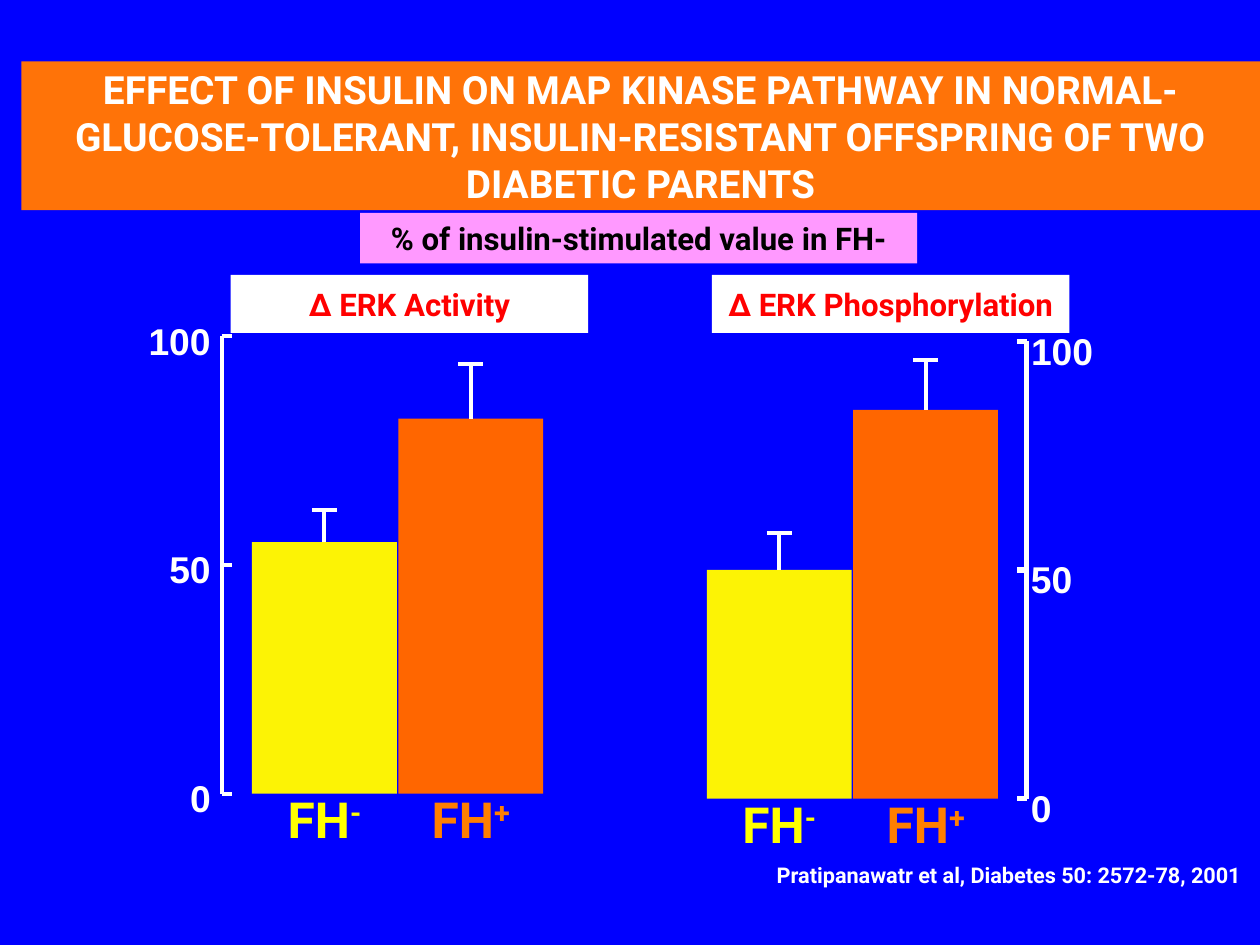
import pptx
import pptx.util
import pptx.dml.color
import pptx.enum.shapes
import pptx.enum.text
import pptx.oxml.ns
import lxml.etree

Cm = pptx.util.Cm
Pt = pptx.util.Pt
RGB = pptx.dml.color.RGBColor
ANCHOR = pptx.enum.text.MSO_ANCHOR

BLUE = RGB(0x00, 0x00, 0xFF)
WHITE = RGB(0xFF, 0xFF, 0xFF)
BLACK = RGB(0x00, 0x00, 0x00)
RED = RGB(0xFF, 0x00, 0x00)
PINK = RGB(0xFF, 0x99, 0xFF)
AMBER = RGB(0xFF, 0x73, 0x08)
LEMON = RGB(0xFC, 0xF3, 0x05)
RUST = RGB(0xFF, 0x66, 0x00)
YELLOW = RGB(0xFF, 0xFF, 0x00)
ORANGE = RGB(0xFF, 0x7F, 0x00)

AXIS = 9.22   # height of 0 to 100
BAR = 2.92    # bar width
STEP = 2.95   # from one bar to the next
GROUPS = [("-", LEMON, YELLOW), ("+", RUST, ORANGE)]


def rect(slide, x, y, w, h, fill):
    kind = pptx.enum.shapes.MSO_SHAPE.RECTANGLE
    shape = slide.shapes.add_shape(kind, Cm(x), Cm(y), Cm(w), Cm(h))
    shape.shadow.inherit = False
    shape.fill.solid()
    shape.fill.fore_color.rgb = fill
    shape.line.fill.background()
    return shape


def line(slide, x1, y1, x2, y2, width):
    kind = pptx.enum.shapes.MSO_CONNECTOR.STRAIGHT
    item = slide.shapes.add_connector(kind, Cm(x1), Cm(y1), Cm(x2), Cm(y2))
    item.line.color.rgb = WHITE
    item.line.width = Pt(width)
    props = item._element.spPr
    lxml.etree.SubElement(props, pptx.oxml.ns.qn("a:effectLst"))
    return item


def write(shape, text, size, color, font="Roboto", raised="",
          wrap=False, anchor=ANCHOR.MIDDLE):
    frame = shape.text_frame
    frame.word_wrap = wrap
    frame.vertical_anchor = anchor
    para = frame.paragraphs[0]
    para.alignment = pptx.enum.text.PP_ALIGN.CENTER
    para.font.name = font
    para.font.size = Pt(size)
    para.font.bold = True
    para.font.color.rgb = color
    para.add_run().text = text
    if raised:
        run = para.add_run()
        run.text = raised
        run.font._element.set("baseline", "30000")
    return frame


def label(slide, x, y, w, h, *args, **kwargs):
    box = slide.shapes.add_textbox(Cm(x), Cm(y), Cm(w), Cm(h))
    return write(box, *args, anchor=ANCHOR.TOP, **kwargs)


def header(slide, x, y, w):
    # Title band
    band = rect(slide, x, y, w, 3, AMBER)
    write(band, "EFFECT OF INSULIN ON MAP KINASE PATHWAY IN NORMAL-"
          "GLUCOSE-TOLERANT, INSULIN-RESISTANT OFFSPRING OF TWO "
          "DIABETIC PARENTS", 22.2, WHITE, wrap=True)
    # Unit of both charts
    unit = rect(slide, x + 6.83, y + 3.05, 11.23, 1.02, PINK)
    write(unit, "% of insulin-stimulated value in FH-", 17.8, BLACK)


def bars(slide, x, base, values):
    """Draw the bars, each a (mean, top of error) pair in percent."""
    for i, (mean, peak) in enumerate(values):
        sign, fill, color = GROUPS[i]
        left = x + i * STEP
        mid = left + BAR / 2
        top = base - AXIS * mean / 100
        cap = base - AXIS * peak / 100
        bar = rect(slide, left, top, BAR, base - top, fill)
        stem = line(slide, mid, top, mid, cap, 2.25)
        stem.begin_connect(bar, 0)
        line(slide, mid - 0.25, cap, mid + 0.25, cap, 2.25)
        label(slide, mid - 1.08, base - 0.23, 2.16, 1.47,
              "FH", 28.4, color, raised=sign)


def scale(slide, x, base, side, width, drop):
    """Draw the axis; side is 1 left of the bars and -1 right of them."""
    line(slide, x, base - AXIS, x, base, width)
    for mark in (0, 50, 100):
        y = base - AXIS * mark / 100
        line(slide, x, y, x + side * 0.2, y, width)
        wide = 0.42 * len(str(mark))
        left = x - 0.22 - wide if side > 0 else x + 0.08
        frame = label(slide, left, y - drop, wide, 0.91,
                      str(mark), 21.3, WHITE, font="Arial")
        frame.margin_left = frame.margin_right = 0
        frame.margin_top = frame.margin_bottom = 0


def panel(slide, x, base, name, shift, values, axis):
    # Heading, bars and axis, placed from the foot of the first bar
    head = rect(slide, x + shift, 5.54, 7.21, 1.17, WHITE)
    write(head, name, 17.8, RED)
    bars(slide, x, base, values)
    gap, side, width, drop = axis
    scale(slide, x + gap, base, side, width, drop)


def main():
    deck = pptx.Presentation()
    deck.slide_width = Cm(25.4)
    deck.slide_height = Cm(19.05)
    slide = deck.slides.add_slide(deck.slide_layouts[6])
    slide.background.fill.solid()
    slide.background.fill.fore_color.rgb = BLUE

    header(slide, 0.43, 1.24, 24.97)
    panel(slide, 5.08, 16, "∆ ERK Activity", -0.43,
          [(55, 62), (82, 94)], (-0.61, 1, 2.25, 0.37))
    panel(slide, 14.25, 16.1, "∆ ERK Phosphorylation", 0.1,
          [(50, 58), (85, 96)], (6.45, -1, 3, 0.27))
    # Source
    label(slide, 15.21, 17.25, 10.26, 0.79,
          "Pratipanawatr et al, Diabetes 50: 2572-78, 2001", 12.4, WHITE)

    deck.save("out.pptx")


if __name__ == "__main__":
    main()
